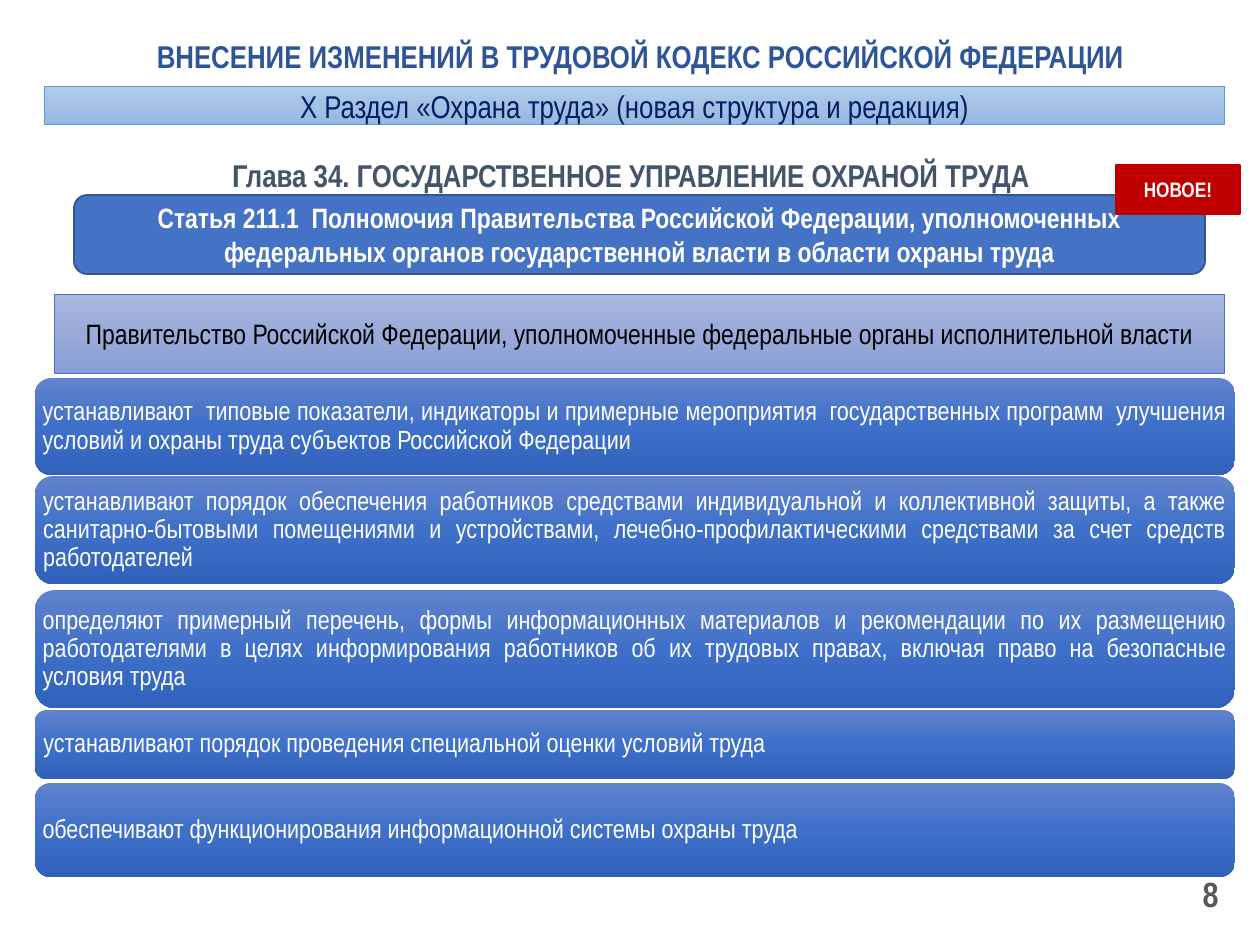
import copy
from pptx import Presentation
from pptx import util as u
from pptx.dml.color import RGBColor
from pptx.enum import shapes, text
from pptx.oxml.ns import qn

PX = 914400 / 126
FONT = "Arial Narrow"
WHITE = RGBColor(0xFF, 0xFF, 0xFF)
BLACK = RGBColor(0x00, 0x00, 0x00)
GREY = RGBColor(0x59, 0x59, 0x59)
SLATE = RGBColor(0x44, 0x54, 0x6A)
NAVY = RGBColor(0x00, 0x20, 0x60)
TITLE_BLUE = RGBColor(0x2F, 0x55, 0x97)
BLUE = RGBColor(0x44, 0x72, 0xC4)
DARK_BLUE = RGBColor(0x32, 0x54, 0x91)
SKY = RGBColor(0x5B, 0x9B, 0xD5)
RED = RGBColor(0xC0, 0x00, 0x00)
CARD_FILL = [RGBColor(0x61, 0x83, 0xCB), RGBColor(0x3E, 0x70, 0xCA), RGBColor(0x30, 0x62, 0xBB)]
SECTION_FILL = [RGBColor(0xB1, 0xCB, 0xE9), RGBColor(0xA3, 0xC1, 0xE5), RGBColor(0x93, 0xB9, 0xE4)]
BODIES_FILL = [RGBColor(0xA8, 0xB7, 0xDF), RGBColor(0x9A, 0xAB, 0xD9), RGBColor(0x88, 0x9E, 0xD7)]
RECT = shapes.MSO_SHAPE.RECTANGLE
ROUND = shapes.MSO_SHAPE.ROUNDED_RECTANGLE
LEFT, CENTER, RIGHT, JUSTIFY = (
    text.PP_ALIGN.LEFT, text.PP_ALIGN.CENTER, text.PP_ALIGN.RIGHT, text.PP_ALIGN.JUSTIFY)

deck = Presentation()
deck.slide_width = u.Inches(10)
deck.slide_height = u.Inches(7.5)
page = deck.slides.add_slide(deck.slide_layouts[6])


def write(box, words, size, color, bold=False, align=CENTER):
    frame = box.text_frame
    frame.word_wrap = True
    frame.vertical_anchor = text.MSO_ANCHOR.MIDDLE
    para = frame.paragraphs[0]
    para.alignment = align
    span = para.add_run()
    span.text = words
    span.font.name = FONT
    span.font.size = u.Pt(size)
    span.font.bold = bold
    span.font.color.rgb = color
    return para


def add_panel(kind, bounds, fill=None, line=None, line_width=1):
    panel = page.shapes.add_shape(kind, *[int(value * PX) for value in bounds])
    panel.shadow.inherit = False
    if fill is None:
        panel.fill.background()
    elif isinstance(fill, list):
        panel.fill.gradient()
        panel.fill.gradient_angle = 270
        stop_list = panel.fill._xPr.find(qn("a:gradFill")).find(qn("a:gsLst"))
        stop_list.insert(1, copy.deepcopy(stop_list[0]))
        for stop, color, position in zip(panel.fill.gradient_stops, fill, (0, 0.5, 1)):
            stop.color.rgb = color
            stop.position = position
    else:
        panel.fill.solid()
        panel.fill.fore_color.rgb = fill
    if line is None:
        panel.line.fill.background()
    else:
        panel.line.color.rgb = line
        panel.line.width = u.Pt(line_width)
    return panel


labels = [
    ((937, 869, 294, 50), "8", 20, GREY, RIGHT),
    ((105, 16, 1071, 79), "ВНЕСЕНИЕ ИЗМЕНЕНИЙ В ТРУДОВОЙ КОДЕКС РОССИЙСКОЙ ФЕДЕРАЦИИ",
     18, TITLE_BLUE, CENTER),
]
for bounds, words, size, color, align in labels:
    label = page.shapes.add_textbox(*[int(value * PX) for value in bounds])
    write(label, words, size, color, True, align)

article = add_panel(ROUND, (74, 195, 1131, 79), BLUE, DARK_BLUE)
write(article, "Статья 211.1  Полномочия Правительства Российской Федерации, уполномоченных "
      "федеральных органов государственной власти в области охраны труда", 16, WHITE, True)

cards = [
    (378, 97, "устанавливают  типовые показатели, индикаторы и примерные мероприятия  "
     "государственных программ  улучшения условий и охраны труда субъектов Российской Федерации"),
    (476, 108, "устанавливают порядок обеспечения работников средствами индивидуальной и "
     "коллективной защиты, а также санитарно-бытовыми помещениями и устройствами, "
     "лечебно-профилактическими средствами за счет средств работодателей"),
    (590, 118, "определяют примерный перечень, формы информационных материалов и рекомендации "
     "по их размещению работодателями в целях информирования работников об их трудовых правах, "
     "включая право на безопасные условия труда"),
    (710, 69, "устанавливают порядок проведения специальной оценки условий труда"),
    (783, 94, "обеспечивают функционирования информационной системы охраны труда"),
]
for top, height, words in cards:
    card = add_panel(ROUND, (35, top, 1200, height), CARD_FILL)
    frame = card.text_frame
    frame.margin_left = frame.margin_right = int((8 - round(height * 0.05)) * PX)
    frame.margin_top = frame.margin_bottom = 0
    write(card, words, 15, WHITE, align=JUSTIFY).line_spacing = 0.9

tag = add_panel(RECT, (1116, 165, 124, 49), RED, RED)
write(tag, "НОВОЕ!", 12, WHITE, True)

chapter = add_panel(ROUND, (105, 145, 1052, 59))
write(chapter, "Глава 34. ГОСУДАРСТВЕННОЕ УПРАВЛЕНИЕ ОХРАНОЙ ТРУДА", 18, SLATE, True)

section = add_panel(RECT, (44, 86, 1181, 39), SECTION_FILL, SKY, 0.5)
write(section, "Х Раздел «Охрана труда» (новая структура и редакция)", 18, NAVY)

bodies = add_panel(RECT, (54, 294, 1171, 79), BODIES_FILL, BLUE, 0.5)
write(bodies, "Правительство Российской Федерации, уполномоченные федеральные органы "
      "исполнительной власти", 16, BLACK)

deck.save("out.pptx")
